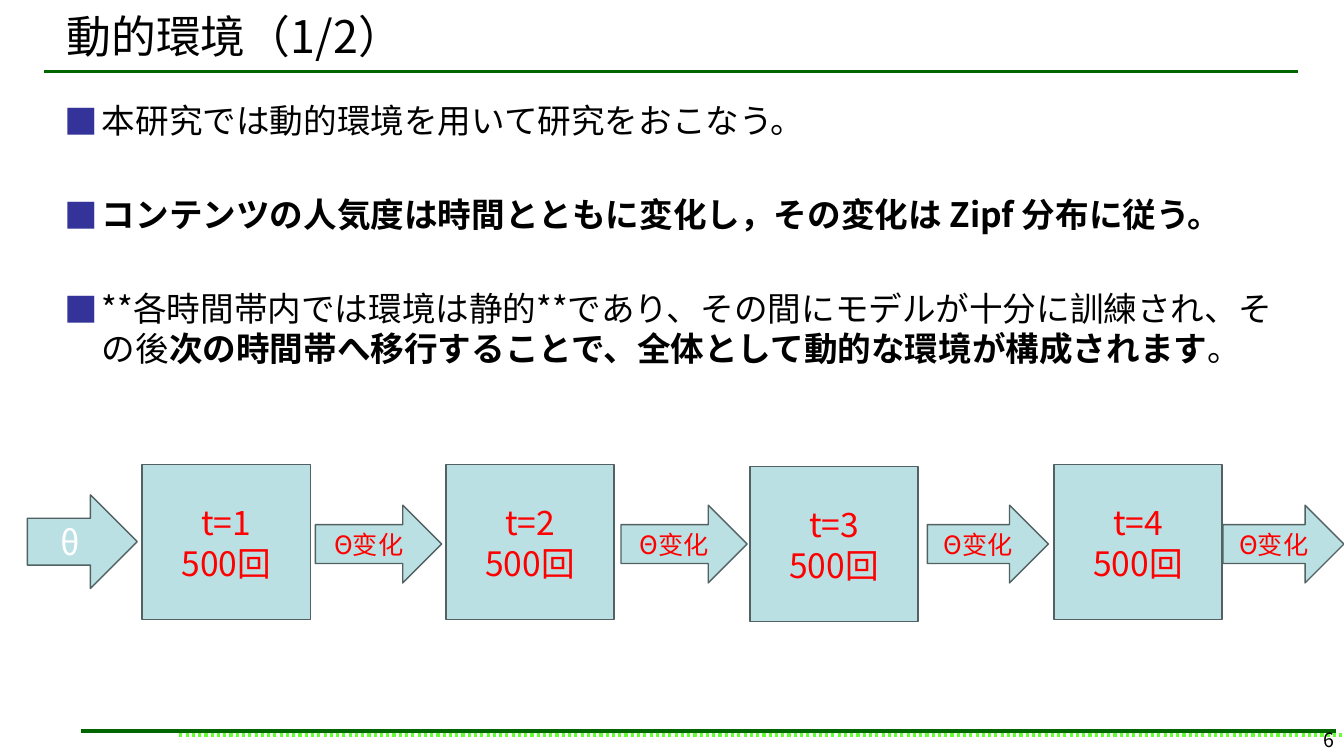
from lxml import etree
from pptx import Presentation
from pptx.dml.color import RGBColor
from pptx.enum.dml import MSO_LINE_DASH_STYLE as Dash
from pptx.enum.shapes import MSO_CONNECTOR as Link, MSO_SHAPE as Kind
from pptx.enum.text import MSO_ANCHOR as Anchor, PP_ALIGN as Align
from pptx.oxml.ns import qn
from pptx.util import Cm, Pt

FONT = "Noto Sans CJK JP"
COLORS = {"text": "000000", "red": "FF0000", "white": "FFFFFF", "fill": "BBE0E3",
          "edge": "526263", "rule": "006600", "dots": "66FF33", "bullet": "333399"}


def color(name):
    return RGBColor.from_string(COLORS[name])


def write(frame, *paras, size=24, ink="text", align=Align.LEFT,
          anchor=Anchor.MIDDLE, gap=0, bullet=False):
    """Fill a frame with paragraphs, each a list of (text, bold) runs."""
    frame.word_wrap = True
    frame.vertical_anchor = anchor
    for i, runs in enumerate(paras):
        para = frame.paragraphs[0] if i == 0 else frame.add_paragraph()
        para.alignment = align
        para.line_spacing = Pt(round(size * 1.2))
        para.space_before = Pt(gap if i else 0)
        if bullet:
            props = para._p.get_or_add_pPr()
            props.set("marL", str(Cm(0.95)))
            props.set("indent", str(-Cm(0.95)))
            tint = etree.SubElement(props, qn("a:buClr"))
            etree.SubElement(tint, qn("a:srgbClr"), val=COLORS["bullet"])
            etree.SubElement(props, qn("a:buFont"), typeface=FONT)
            etree.SubElement(props, qn("a:buChar"), char="■")
        for text, bold in runs:
            run = para.add_run()
            run.text = text
            font = run.font
            font.name, font.size, font.bold = FONT, Pt(size), bold
            font.color.rgb = color(ink)
            face = etree.Element(qn("a:ea"), typeface=FONT)
            run._r.rPr.find(qn("a:latin")).addnext(face)


deck = Presentation()
deck.slide_width, deck.slide_height = Cm(33.87), Cm(19.05)
slide = deck.slides.add_slide(deck.slide_layouts[5])
shapes = slide.shapes

# Rules
for x1, x2, y, ink, dash in [(4.52, 33.87, 18.52, "dots", Dash.ROUND_DOT),
                             (2.03, 33.66, 18.42, "rule", None),
                             (1.12, 32.72, 1.8, "rule", None)]:
    rule = shapes.add_connector(Link.STRAIGHT, Cm(x1), Cm(y), Cm(x2), Cm(y))
    rule.line.color.rgb = color(ink)
    rule.line.width = Pt(2.25)
    rule.line.dash_style = dash
    etree.SubElement(rule._element.spPr, qn("a:effectLst"))

# Title, body and page number
title = shapes.title
title.left, title.top, title.width, title.height = Cm(1.42), Cm(0.18), Cm(29.06), Cm(1.47)
write(title.text_frame, [("動的環境（1/2）", False)], size=32)

body = shapes.add_textbox(Cm(1.37), Cm(2.39), Cm(31.04), Cm(15.82))
write(body.text_frame,
      [("本研究では動的環境を用いて研究をおこなう。", False)],
      [("コンテンツの人気度は時間とともに変化し，その変化は Zipf 分布に従う。", True)],
      [("**各時間帯内では環境は静的**であり、その間にモデルが十分に訓練され、その後", False),
       ("次の時間帯へ移行することで、全体として動的な環境が構成されます", True),
       ("。", False)],
      anchor=Anchor.TOP, gap=38, bullet=True)

page = shapes.add_textbox(Cm(26.82), Cm(18.21), Cm(7.05), Cm(1.27))
write(page.text_frame, [("6", False)], size=14, align=Align.RIGHT, anchor=Anchor.TOP)

# Time steps and the arrows between them
steps = [(Kind.RECTANGLE, 3.58 + 7.66 * i, 11.76 if i == 2 else 11.71, 4.24, 3.91,
          [f"t={i + 1}", "500回"], 24, "red") for i in range(4)]
moves = [(Kind.RIGHT_ARROW, x, 12.73, w, 1.96, ["Θ变化"], 18, "red")
         for x, w in [(7.95, 3.18), (15.65, 3.18), (23.37, 3.05), (30.82, 3.05)]]
start = (Kind.RIGHT_ARROW, 0.69, 12.47, 2.77, 2.36, ["θ"], 24, "white")

for kind, x, y, w, h, lines, size, ink in [*steps, start, *moves]:
    shape = shapes.add_shape(kind, Cm(x), Cm(y), Cm(w), Cm(h))
    shape.shadow.inherit = False
    shape.fill.solid()
    shape.fill.fore_color.rgb = color("fill")
    shape.line.color.rgb = color("edge")
    shape.line.width = Pt(1)
    write(shape.text_frame, *[[(line, False)] for line in lines],
          size=size, ink=ink, align=Align.CENTER)

deck.save("out.pptx")
